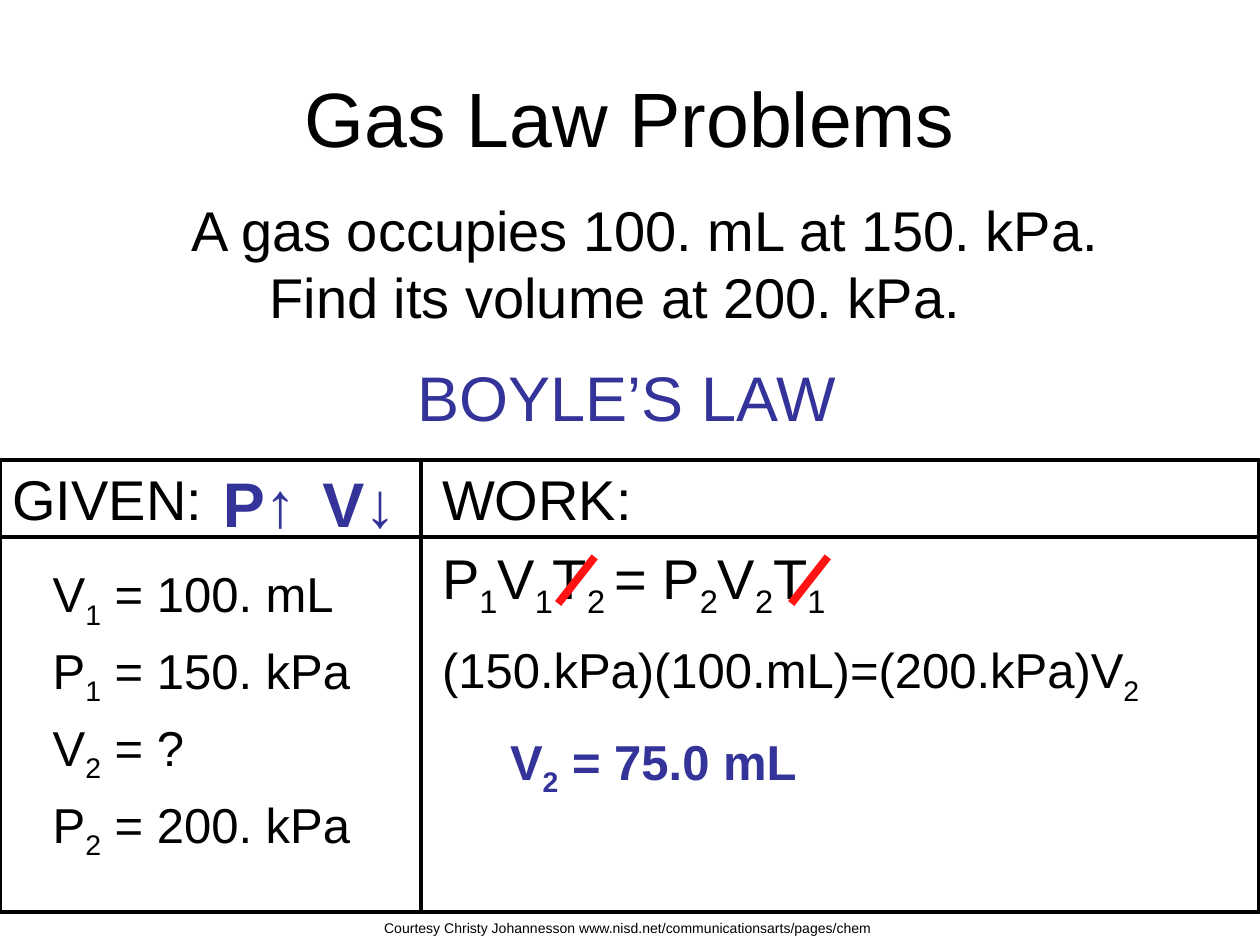
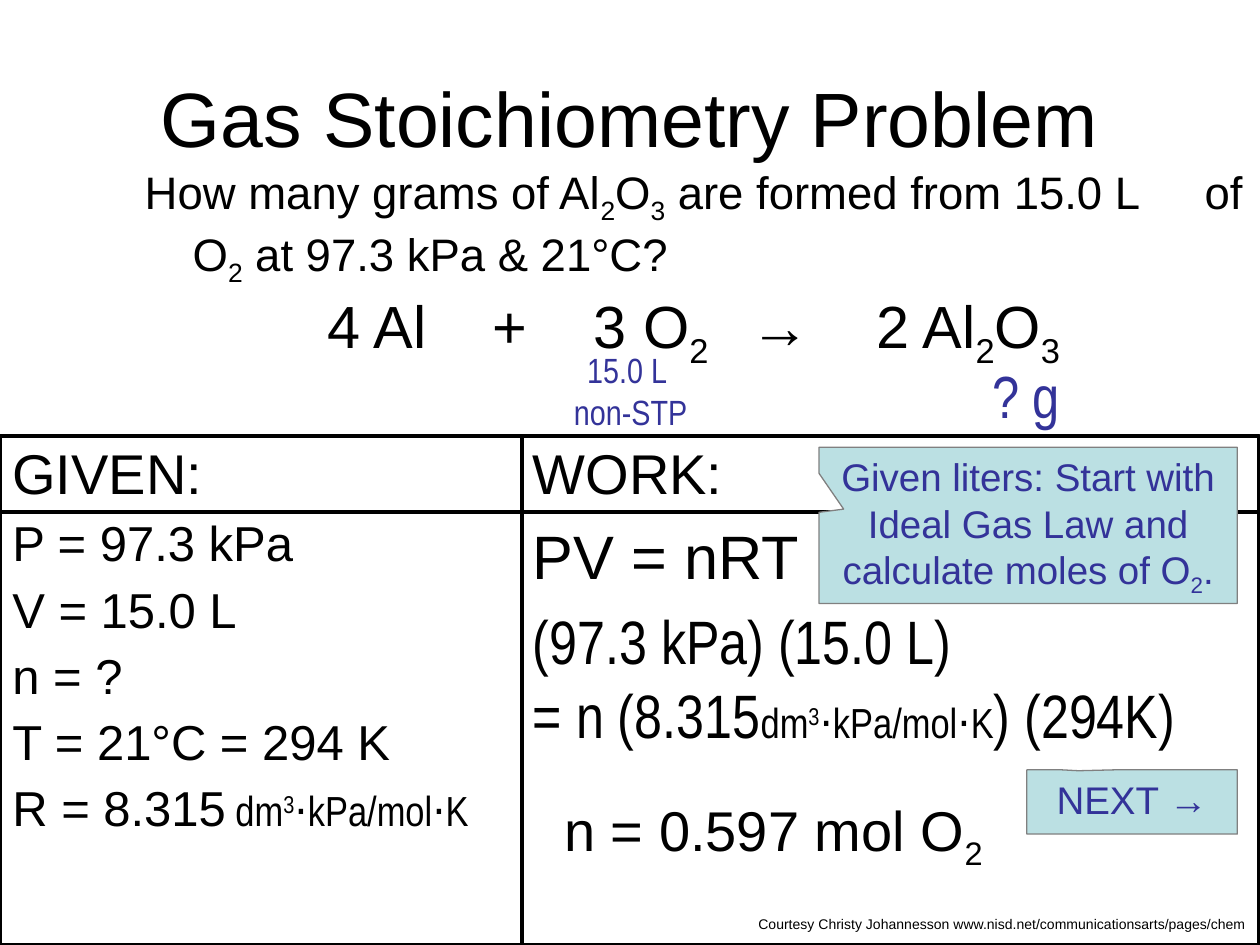
import pptx
import pptx.util
import pptx.dml.color
import pptx.enum.shapes
import pptx.enum.text
from lxml import etree

WIDTH, HEIGHT = 10, 7.5
COLORS = {"ink": "000000", "accent": "333399", "strike": "FF1313",
          "note": "BBE0E3", "edge": "808080"}
DRAWING = "{http://schemas.openxmlformats.org/drawingml/2006/main}"
SHAPES = pptx.enum.shapes.MSO_SHAPE
ANCHORS = pptx.enum.text.MSO_ANCHOR
CENTER = pptx.enum.text.PP_ALIGN.CENTER

# Text styles
PLAIN = {"size": 32, "font": "Arial", "color": "ink", "bold": False}
TITLE = {"size": 44, "align": CENTER}
LAW = {"size": 36, "color": "accent", "align": CENTER}
TREND = {"size": 36, "color": "accent", "bold": True}
NARROW = {"size": 35, "font": "Arial Narrow"}
UNIT = {"size": 24, "font": "Arial Narrow"}
LABEL = {"size": 20, "font": "Arial Narrow", "color": "accent", "align": CENTER}
NOTE = {"size": 22, "color": "accent", "align": CENTER}
CREDIT = {"size": 8}
KNOWN = {"size": 28, "left": 0.32, "before": 5.6}
GIVEN = {"size": 28, "before": 4.2}

# Content: ~x~ is a subscript, ^x^ a superscript, | a wide gap.
# A paragraph is (text, style), where text may be a list of (text, style) runs.
CREDIT_LINE = "Courtesy Christy Johannesson www.nisd.net/communicationsarts/pages/chem"
GAS_UNIT = "dm^3^⋅kPa/mol⋅K"

PROBLEMS = [
    {
        "title": "Gas Law Problems",
        "frame": {"top": 3.65, "bottom": 7.24, "split": 3.34, "header": 4.26},
        "credit": (2.95, 7.25),
        "texts": [
            ((0, 3.64, 3.59, 3.6), [
                ("GIVEN:", {}),
                ("V~1~ = 100. mL", {**KNOWN, "before": 18.2}),
                ("P~1~ = 150. kPa", KNOWN),
                ("V~2~ = ?", KNOWN),
                ("P~2~ = 200. kPa", KNOWN)]),
            ((3.41, 3.64, 6.59, 1.4), [
                ("WORK:", {}),
                ("P~1~V~1~T~2 ~= P~2~V~2~T~1~", {"before": 6.4})]),
            ((1.42, 1.5, 8.58, 1.3), [
                ("A gas occupies 100. mL at 150. kPa.", {}),
                ("Find its volume at 200. kPa.", {"left": 0.62})]),
            ((2.17, 2.8, 5.61, 0.64), [("BOYLE’S LAW", LAW)]),
            ((1.67, 3.64, 0.9, 0.64), [("P↑", TREND)]),
            ((2.38, 3.64, 0.94, 0.64), [("V↓", {**TREND, "align": CENTER})]),
            ((3.41, 5.03, 6.59, 1.67), [
                ("(150.kPa)(100.mL)=(200.kPa)V~2~", {"size": 28}),
                ("V~2~ = 75.0 mL", {"size": 28, "color": "accent", "bold": True,
                                    "left": 0.54, "before": 14})]),
        ],
        "strikes": [(4.43, 4.79), (6.28, 4.79)],
        "notes": [],
    },
    {
        "title": "Gas Stoichiometry Problem",
        "frame": {"top": 3.46, "bottom": 7.5, "split": 4.14, "header": 4.06},
        "credit": (5.92, 7.22),
        "texts": [
            ((4.13, 3.43, 5.87, 3.86), [
                ("WORK:", {}),
                ("PV = nRT", {"size": 35, "before": 7}),
                ("(97.3 kPa) (15.0 L)", {**NARROW, "before": 7}),
                ([("= n (8.315", {}), (GAS_UNIT, UNIT), (") (294K)", {})], NARROW),
                ("n = 0.597 mol O~2~", {"left": 0.25, "before": 25.6})]),
            ((1.05, 1.25, 8.95, 1.2), [
                ("How many grams of Al~2~O~3~ are formed from 15.0 L|of O~2~"
                 " at 97.3 kPa & 21°C?",
                 {"size": 26, "left": 0.38, "first": -0.38, "gap": 4})]),
            ((0, 3.43, 4.13, 3.86), [
                ("GIVEN:", {}),
                ("P = 97.3 kPa", GIVEN),
                ("V = 15.0 L", GIVEN),
                ("n = ?", GIVEN),
                ("T = 21°C = 294 K", GIVEN),
                ([("R = 8.315", {}), (" " + GAS_UNIT, UNIT)], GIVEN)]),
            ((1.46, 2.18, 8.17, 0.9), [
                ("4 Al|+|3 O~2|~→|2 Al~2~O~3 ~",
                 {"size": 34, "align": CENTER, "gap": 3, "spacing": 1.1})]),
            ((4.4, 2.72, 1.21, 0.78), [("15.0 L ", LABEL), ("non-STP", LABEL)]),
            ((6.88, 2.8, 2.53, 0.78), [("? g", {**LABEL, "size": 34})]),
        ],
        "strikes": [],
        "notes": [
            ((6.5, 3.55, 3.32, 1.24), (-0.441, -0.104),
             "Given liters: Start with Ideal Gas Law and calculate moles of O~2~."),
            ((8.15, 6.11, 1.67, 0.51), (-0.255, -0.486), "NEXT →"),
        ],
    },
]


def inches(values):
    return [pptx.util.Inches(value) for value in values]


def rgb(name):
    return pptx.dml.color.RGBColor.from_string(COLORS[name])


def pieces(text):
    """Yield (text, baseline percent, is a gap) for each part of marked text."""
    shifts = {"~": -25, "^": 30}
    baseline, piece = 0, ""
    for letter in text:
        if letter not in "~^|":
            piece += letter
            continue
        if piece:
            yield piece, baseline, False
        piece = ""
        if letter == "|":
            yield " ", baseline, True
        else:
            baseline = 0 if baseline else shifts[letter]
    if piece:
        yield piece, baseline, False


def add_runs(paragraph, text, style):
    for piece, baseline, is_gap in pieces(text):
        run = paragraph.add_run()
        run.text = piece
        formats = {"name": style["font"], "size": pptx.util.Pt(style["size"]),
                   "bold": style["bold"]}
        for key, value in formats.items():
            setattr(run.font, key, value)
        run.font.color.rgb = rgb(style["color"])
        properties = run._r.get_or_add_rPr()
        if baseline:
            properties.set("baseline", str(baseline * 1000))
        if is_gap:
            space = 0.278 * style["size"] * (0.66 if baseline else 1)
            properties.set("spc", str(round(space * style["gap"] * 100)))


def write(frame, paragraphs, wrap=True, anchor=ANCHORS.TOP):
    frame.word_wrap = wrap
    frame.vertical_anchor = anchor
    for index, (text, changes) in enumerate(paragraphs):
        style = {**PLAIN, **changes}
        paragraph = frame.paragraphs[0] if index == 0 else frame.add_paragraph()
        formats = {"alignment": style.get("align"),
                   "line_spacing": style.get("spacing"),
                   "space_before": pptx.util.Pt(style.get("before", 0))}
        for key, value in formats.items():
            setattr(paragraph, key, value)
        properties = paragraph._p.get_or_add_pPr()
        for key, name in (("left", "marL"), ("first", "indent")):
            properties.set(name, str(pptx.util.Inches(style.get(key, 0))))
        for words, run_style in [(text, {})] if isinstance(text, str) else text:
            add_runs(paragraph, words, {**style, **run_style})


def add_text(slide, place, paragraphs, **options):
    write(slide.shapes.add_textbox(*inches(place)).text_frame, paragraphs, **options)


def add_box(slide, kind, place, fill, edge, weight):
    box = slide.shapes.add_shape(kind, *inches(place))
    box.shadow.inherit = False
    if fill:
        box.fill.solid()
        box.fill.fore_color.rgb = rgb(fill)
    else:
        box.fill.background()
    box.line.color.rgb = rgb(edge)
    box.line.width = pptx.util.Pt(weight)
    return box


def add_line(slide, start, end, color="ink", weight=2.25):
    line = slide.shapes.add_connector(
        pptx.enum.shapes.MSO_CONNECTOR.STRAIGHT, *inches(start + end))
    line.line.color.rgb = rgb(color)
    line.line.width = pptx.util.Pt(weight)
    etree.SubElement(line._element.spPr, DRAWING + "effectLst")


def add_frame(slide, top, bottom, split, header):
    add_box(slide, SHAPES.RECTANGLE, (0, top, WIDTH - 0.01, bottom - top),
            None, "ink", 2.25)
    add_line(slide, (split, top), (split, bottom))
    add_line(slide, (0, header), (WIDTH, header))


def add_problem(deck, problem):
    slide = deck.slides.add_slide(deck.slide_layouts[6])
    # Title and the given / work frame
    add_frame(slide, **problem["frame"])
    add_text(slide, (0.5, 0.3, WIDTH - 1, 1.25), [(problem["title"], TITLE)],
             anchor=ANCHORS.MIDDLE)
    # Question, law, data and working
    for place, paragraphs in problem["texts"]:
        add_text(slide, place, paragraphs)
    # Cancelled terms
    for x, y in problem["strikes"]:
        add_line(slide, (x, y), (x + 0.29, y - 0.37), "strike", 4.5)
    # Callouts
    for place, pointer, text in problem["notes"]:
        note = add_box(slide, SHAPES.RECTANGULAR_CALLOUT, place, "note", "edge", 0.75)
        for index, share in enumerate(pointer):
            note.adjustments[index] = share
        write(note.text_frame, [(text, NOTE)])
    # Credit
    add_text(slide, (*problem["credit"], 4.08, 0.24), [(CREDIT_LINE, CREDIT)], wrap=False)


def main():
    deck = pptx.Presentation()
    deck.slide_width, deck.slide_height = inches((WIDTH, HEIGHT))
    for problem in PROBLEMS:
        add_problem(deck, problem)
    deck.save("out.pptx")


if __name__ == "__main__":
    main()
